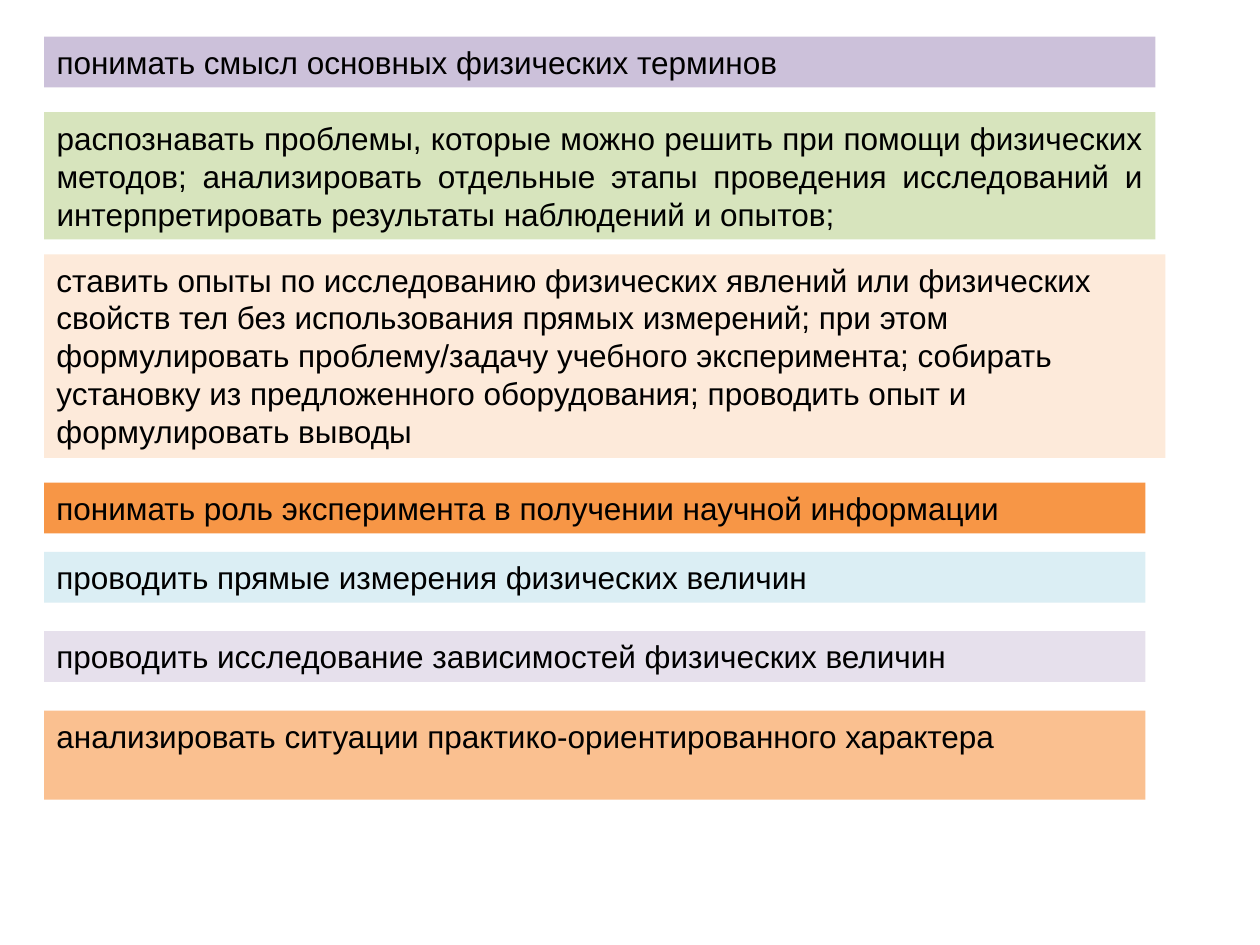
from dataclasses import dataclass

from pptx import Presentation
from pptx.dml.color import RGBColor
from pptx.enum.text import MSO_ANCHOR as Anchor, MSO_AUTO_SIZE as AutoSize, PP_ALIGN as Align
from pptx.util import Inches, Pt

SLIDE_WIDTH, SLIDE_HEIGHT = Inches(10), Inches(7.5)
COLUMNS, ROWS = 1000, 750
LEFT = 35
WIDE, WIDER, NARROW = 882, 890, 874
LINE_ROWS, PADDING_ROWS = 30.3, 5

COLORS = {
    "text": "000000",
    "lilac": "CCC1DA",
    "green": "D7E4BD",
    "cream": "FDEADA",
    "orange": "F79646",
    "aqua": "DBEEF4",
    "lavender": "E6E0EC",
    "peach": "FAC090",
}


@dataclass
class Skill:
    """A skill in a coloured band, placed by grid row and column count."""

    text: str
    color: str
    row: float
    columns: float
    lines: int = 1
    spare_lines: int = 0
    align: Align = Align.LEFT
    anchor: Anchor = Anchor.TOP


SKILLS = [
    Skill("понимать смысл основных физических терминов", "lilac", 29, WIDE),
    Skill("распознавать проблемы, которые можно решить при помощи физических методов; "
          "анализировать отдельные этапы проведения исследований и интерпретировать "
          "результаты наблюдений и опытов;",
          "green", 89, WIDE, lines=3, align=Align.JUSTIFY, anchor=Anchor.MIDDLE),
    Skill("ставить опыты по исследованию физических явлений или физических свойств тел "
          "без использования прямых измерений; при этом формулировать проблему/задачу "
          "учебного эксперимента; собирать установку из предложенного оборудования; "
          "проводить опыт и формулировать выводы",
          "cream", 202, WIDER, lines=5),
    Skill("понимать роль эксперимента в получении научной информации", "orange", 383, NARROW),
    Skill("проводить прямые измерения физических величин", "aqua", 438, NARROW),
    Skill("проводить исследование зависимостей физических величин", "lavender", 501, NARROW),
    Skill("анализировать ситуации практико-ориентированного характера", "peach", 564, NARROW,
          spare_lines=1),
]


def across(columns):
    """Return the length of a number of grid columns."""
    return int(SLIDE_WIDTH * columns / COLUMNS)


def down(rows):
    """Return the length of a number of grid rows."""
    return int(SLIDE_HEIGHT * rows / ROWS)


def rgb(name):
    """Return the named colour."""
    return RGBColor.from_string(COLORS[name])


def add_span(para, text):
    """Add a run in the body style."""
    span = para.add_run()
    span.text = text
    span.font.name = "Arial"
    span.font.size = Pt(18)
    span.font.color.rgb = rgb("text")


def add_band(page, skill):
    """Add a filled text box that fits its skill."""
    rows = 2 * PADDING_ROWS + LINE_ROWS * (skill.lines + skill.spare_lines)
    box = page.shapes.add_textbox(across(LEFT), down(skill.row), across(skill.columns), down(rows))
    box.fill.solid()
    box.fill.fore_color.rgb = rgb(skill.color)
    frame = box.text_frame
    frame.word_wrap = True
    frame.auto_size = AutoSize.SHAPE_TO_FIT_TEXT
    frame.vertical_anchor = skill.anchor
    frame.margin_bottom = down(PADDING_ROWS + LINE_ROWS * skill.spare_lines)
    para = frame.paragraphs[0]
    para.alignment = skill.align
    add_span(para, skill.text)


def main():
    """Build the slide of skills and save it."""
    deck = Presentation()
    deck.slide_width, deck.slide_height = SLIDE_WIDTH, SLIDE_HEIGHT
    page = deck.slides.add_slide(deck.slide_layouts[6])
    for skill in SKILLS:
        add_band(page, skill)
    deck.save("out.pptx")


if __name__ == "__main__":
    main()
